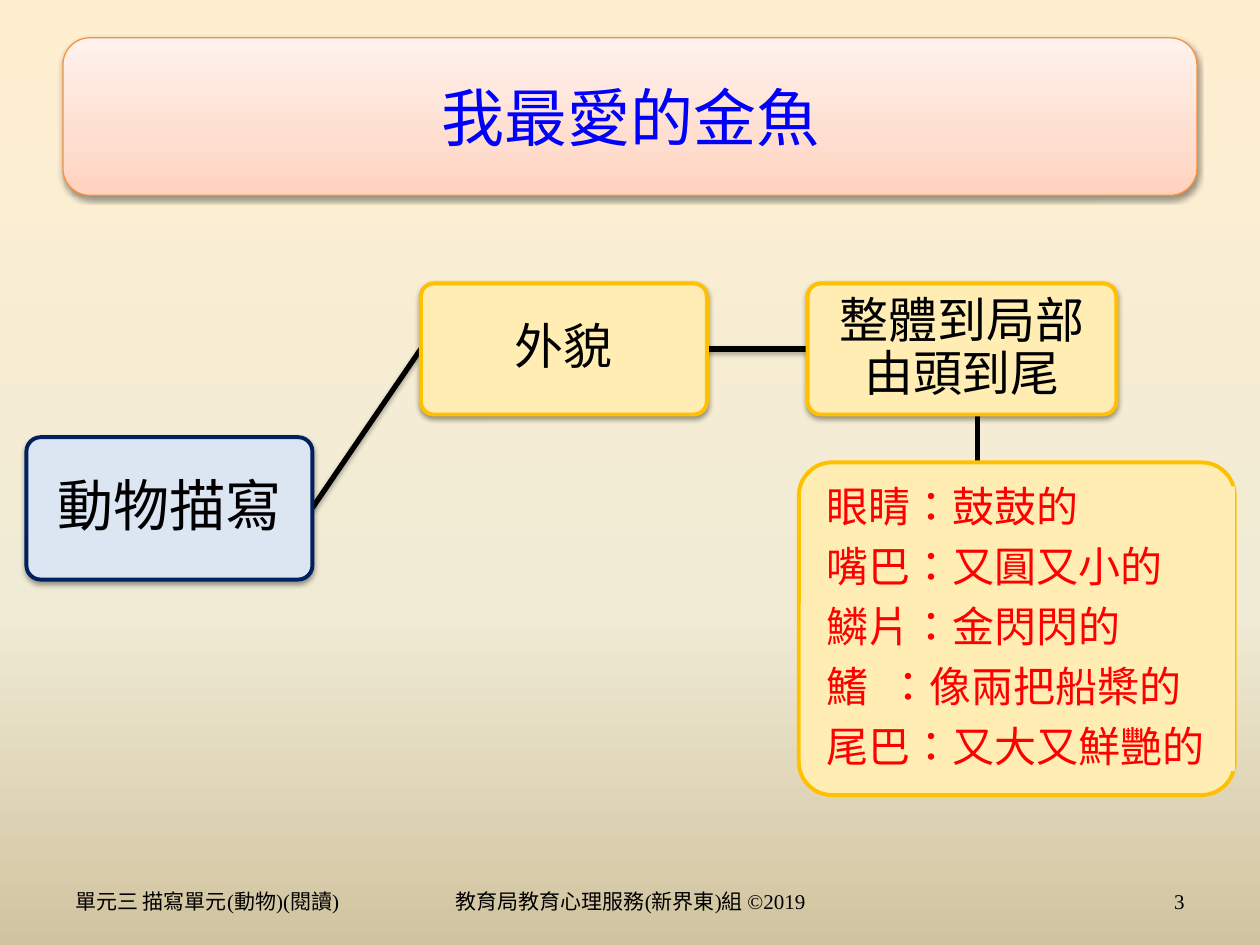
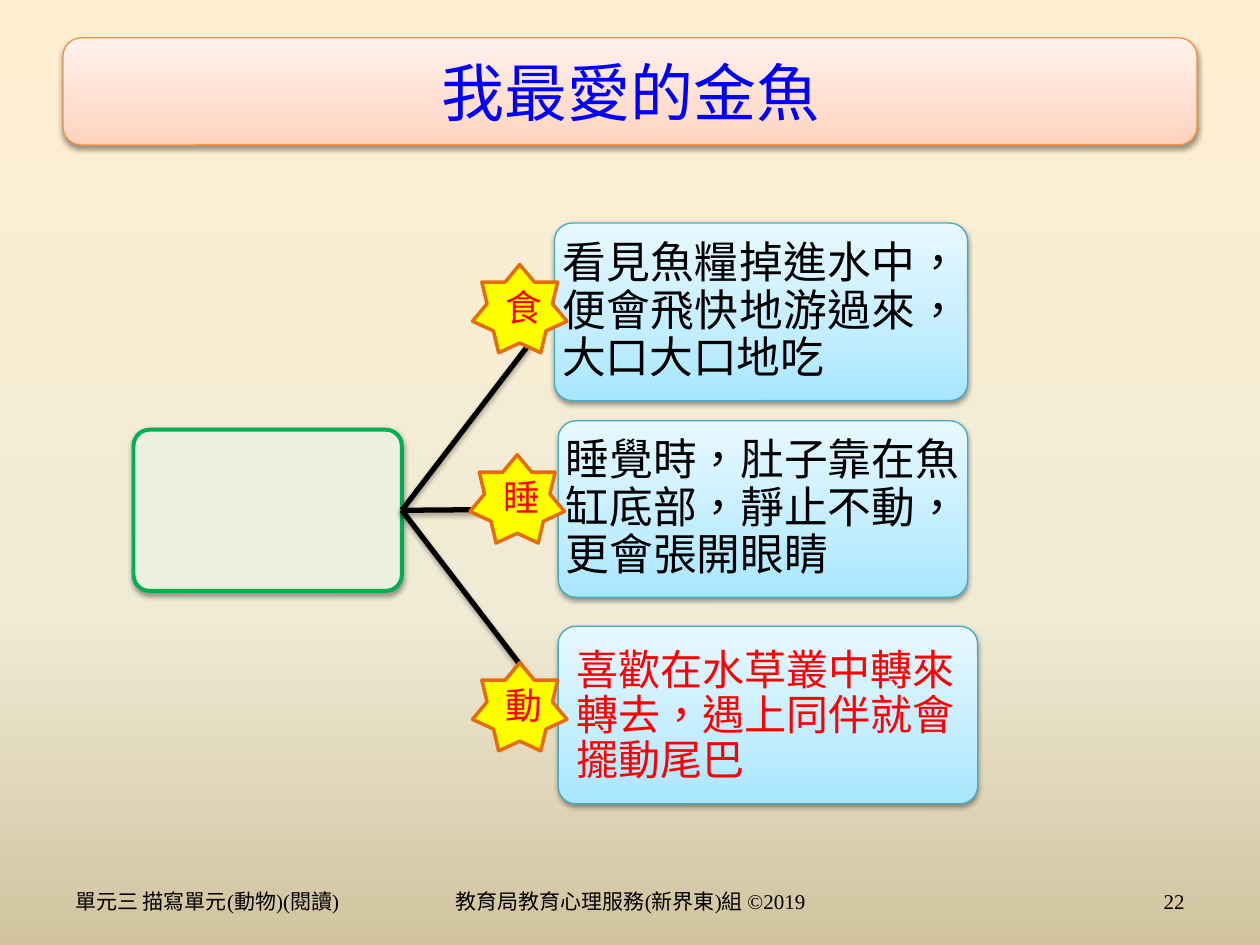
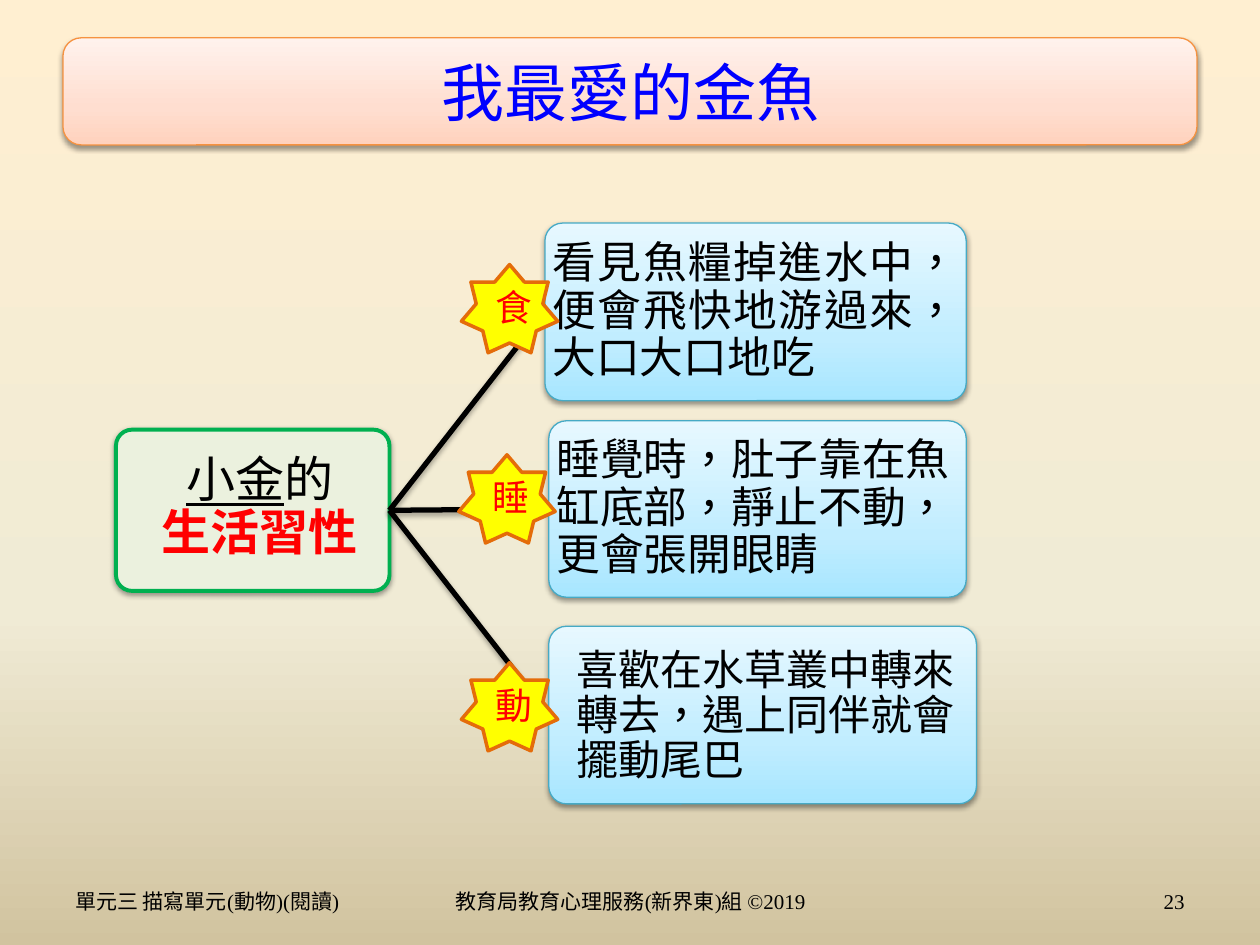
import pptx
import pptx.util
import pptx.oxml
import pptx.oxml.ns
import pptx.dml.color
import pptx.enum.shapes
import pptx.enum.text
from lxml import etree

Inches, Pt = pptx.util.Inches, pptx.util.Pt
RGBColor = pptx.dml.color.RGBColor
SHAPE = pptx.enum.shapes.MSO_SHAPE
ALIGN = pptx.enum.text.PP_ALIGN
ANCHOR = pptx.enum.text.MSO_ANCHOR
qn = pptx.oxml.ns.qn

# Colours
BLACK = RGBColor(0x00, 0x00, 0x00)
RED = RGBColor(0xFF, 0x00, 0x00)
BLUE = RGBColor(0x00, 0x00, 0xFF)
NAVY = RGBColor(0x00, 0x20, 0x60)
PALE_BLUE = RGBColor(0xDC, 0xE6, 0xF2)
CREAM = RGBColor(0xFF, 0xED, 0xB3)
AMBER = RGBColor(0xFF, 0xC0, 0x00)
PALE_GREEN = RGBColor(0xEB, 0xF1, 0xDE)
GREEN = RGBColor(0x00, 0xB0, 0x50)
YELLOW = RGBColor(0xFF, 0xFF, 0x00)
ORANGE = RGBColor(0xE4, 0x6C, 0x0A)
TITLE_EDGE = RGBColor(0xF6, 0x92, 0x40)
HABIT_EDGE = RGBColor(0x46, 0xAA, 0xC5)

# Gradients: stops (percent, colour) and clockwise angle
SAND = ([(0, RGBColor(0xFF, 0xEF, 0xD1)), (65, RGBColor(0xF0, 0xEB, 0xD5)),
         (100, RGBColor(0xD1, 0xC3, 0x9F))], 90)
PEACH = ([(0, RGBColor(0xFF, 0xD2, 0xBD)), (35, RGBColor(0xFF, 0xDE, 0xD0)),
          (100, RGBColor(0xFF, 0xF2, 0xED))], 270)
SKY = ([(0, RGBColor(0xA7, 0xE6, 0xFF)), (35, RGBColor(0xC1, 0xED, 0xFF)),
        (100, RGBColor(0xE7, 0xF8, 0xFF))], 270)

CJK = "Noto Sans CJK SC"
TITLE = "我最愛的金魚"
UNIT = "單元三 描寫單元(動物)(閱讀)"
OFFICE = "教育局教育心理服務(新界東)組 ©2019"


# Formatting
def set_gradient(fill, element, gradient):
    stops, angle = gradient
    fill.gradient()
    grad = next(element.iter(qn("a:gradFill")))
    grad.find(qn("a:lin")).set("ang", str(angle * 60000))
    gs_list = grad.find(qn("a:gsLst"))
    for gs in list(gs_list):
        gs_list.remove(gs)
    for pos, color in stops:
        gs = etree.SubElement(gs_list, qn("a:gs"), pos=str(pos * 1000))
        etree.SubElement(gs, qn("a:srgbClr"), val=str(color))


def set_effects(shape, shadow, alpha=38):
    """Call after fill and line, so that the effects come last."""
    effects = etree.SubElement(shape._element.spPr, qn("a:effectLst"))
    if shadow:
        outer = etree.SubElement(effects, qn("a:outerShdw"), blurRad=str(Pt(3.1)),
                                 dist=str(Pt(1.6)), dir="5400000", rotWithShape="0")
        color = etree.SubElement(outer, qn("a:srgbClr"), val=str(BLACK))
        etree.SubElement(color, qn("a:alpha"), val=str(alpha * 1000))


def style_shape(shape, fill, edge=None, width=2.25, shadow=True):
    if isinstance(fill, RGBColor):
        shape.fill.solid()
        shape.fill.fore_color.rgb = fill
    else:
        set_gradient(shape.fill, shape._element, fill)
    if edge is None:
        shape.line.fill.background()
    else:
        shape.line.color.rgb = edge
        shape.line.width = Pt(width)
    set_effects(shape, shadow)


def write(shape, paragraphs, size, color=BLACK, align=ALIGN.LEFT, spacing=0.9,
          after=0.35, inset=None, anchor=ANCHOR.MIDDLE):
    """Each paragraph is a list of runs: (text, font name, font overrides)."""
    tf = shape.text_frame
    tf.word_wrap = True
    tf.vertical_anchor = anchor
    if inset:
        tf.margin_left = tf.margin_right = Inches(inset[0])
        tf.margin_top = tf.margin_bottom = Inches(inset[1])
    for i, runs in enumerate(paragraphs):
        p = tf.add_paragraph() if i else tf.paragraphs[0]
        p.alignment = align
        p.line_spacing = spacing
        p.space_before = Pt(0)
        p.space_after = Pt(after * size)
        for text, font, *extra in runs:
            r = p.add_run()
            r.text = text
            r.font.name = font
            r.font.size = Pt(size)
            r.font.color.rgb = color
            r._r.get_or_add_rPr().set("lang", "zh-TW")
            for name, value in (extra[0] if extra else {}).items():
                if name == "color":
                    r.font.color.rgb = value
                else:
                    setattr(r.font, name, value)


# Parts
def add_box(s, box, fill, edge=None, kind=SHAPE.ROUNDED_RECTANGLE, width=2.25,
            shadow=True, corner=0.1):
    sp = s.shapes.add_shape(kind, *map(Inches, box))
    if kind == SHAPE.ROUNDED_RECTANGLE:
        sp.adjustments[0] = corner
    style_shape(sp, fill, edge, width, shadow)
    return sp


def add_text(s, box, paragraphs, size, **options):
    sp = s.shapes.add_textbox(*map(Inches, box))
    write(sp, paragraphs, size, **options)


def add_line(s, x1, y1, x2, y2, shadow=True):
    line = s.shapes.add_connector(pptx.enum.shapes.MSO_CONNECTOR.STRAIGHT,
                                  *map(Inches, (x1, y1, x2, y2)))
    line.line.color.rgb = BLACK
    line.line.width = Pt(3)
    set_effects(line, shadow, 35)


def add_title(s, height):
    box = (0.5, 0.3, 9, height)
    band = add_box(s, box, PEACH, TITLE_EDGE, width=0.75, corner=0.17)
    sp = s.shapes.title
    sp.left, sp.top, sp.width, sp.height = map(Inches, box)
    write(sp, [[(TITLE, "Arial")]], 36, BLUE, ALIGN.CENTER, spacing=1, after=0)
    # The band lies behind the title text
    sp._element.addprevious(band._element)


def add_footer(s, number):
    for left, width, text, align in [(0.5, 2.85, UNIT, ALIGN.LEFT),
                                     (3.42, 3.17, OFFICE, ALIGN.CENTER),
                                     (7.17, 2.33, str(number), ALIGN.RIGHT)]:
        add_text(s, (left, 6.95, width, 0.4), [[(text, "Times New Roman")]], 12,
                 align=align, spacing=1, after=0)


def new_slide(prs, title_height, number):
    s = prs.slides.add_slide(prs.slide_layouts[5])
    add_title(s, title_height)
    add_footer(s, number)
    return s


# Appearance map: topic, aspect, order of description
def add_appearance_map(s, left, top):
    nodes = [
        ((0, 1.22, 2.27, 1.13), PALE_BLUE, NAVY, ["動物描寫"], 32),
        ((3.13, 0, 2.27, 1.04), CREAM, AMBER, ["外貌"], 28),
        ((6.2, 0, 2.45, 1.04), CREAM, AMBER, ["整體到局部", "由頭到尾"], 28),
    ]
    for x1, y1, x2, y2, shadow in [(2.27, 1.78, 3.13, 0.52, True),
                                   (5.4, 0.52, 6.2, 0.52, True),
                                   (7.55, 1.03, 7.55, 1.42, False)]:
        add_line(s, left + x1, top + y1, left + x2, top + y2, shadow)
    for (x, y, w, h), fill, edge, lines, size in nodes:
        sp = add_box(s, (left + x, top + y, w, h), fill, edge)
        write(sp, [[(text, CJK)] for text in lines], size, align=ALIGN.CENTER,
              after=0.35 if len(lines) == 1 else 0, inset=(0.05, 0.05))


# Details of the fish, head to tail
def add_details(s, left, top, width, height):
    add_box(s, (left, top, width, height), CREAM, AMBER, shadow=False)
    sp = add_box(s, (left + 0.17, top + 0.19, width - 0.17, height - 0.38), CREAM,
                 kind=SHAPE.RECTANGLE, shadow=False)
    details = ["眼睛：鼓鼓的", "嘴巴：又圓又小的", "鱗片：金閃閃的",
               "鰭  ：像兩把船槳的", "尾巴：又大又鮮艷的"]
    write(sp, [[(text, "Arial")] for text in details], 24, RED, inset=(0.05, 0.03))


# Habits map: a root box and three starred habits
def add_habits_map(s, left, width, answer_color, root_text=None):
    k = width / 6.7

    def place(x, y, w, h):
        return left + k * x, y, k * w, h

    add_box(s, place(0, 3.41, 2.13, 1.28), PALE_GREEN, GREEN)
    habits = [
        (place(3.34, 1.77, 3.28, 1.41), (3.34, 2.47), "食", "Calibri", (2.69, 2.1),
         [("看見魚糧掉進水中，便會飛快地游過來，大口大口地吃", CJK)], ALIGN.JUSTIFY),
        (place(3.37, 3.34, 3.25, 1.4), (3.37, 4.04), "睡", CJK, (2.67, 3.61),
         [("睡覺時，肚子靠", CJK), ("在魚缸底部，靜止不動，更會張開", "Arial"),
          ("眼睛", CJK)], ALIGN.LEFT),
        (place(3.37, 4.97, 3.33, 1.41), (3.37, 5.67), "動", CJK, (2.69, 5.26),
         None, ALIGN.LEFT),
    ]
    for box, (x, y), star, font, (star_x, star_y), runs, align in habits:
        add_line(s, left + k * 2.13, 4.05, left + k * x, y)
        sp = add_box(s, box, SKY, HABIT_EDGE, width=0.75)
        if runs:
            # The rounded corners add to the inset
            write(sp, [runs], 25, align=align, inset=(0.02, 0.02))
        sp = add_box(s, place(star_x, star_y, 0.75, 0.7), YELLOW, ORANGE,
                     SHAPE.STAR_7_POINT, 2, shadow=False)
        write(sp, [[(star, font)]], 21, RED, ALIGN.CENTER, spacing=1, after=0)

    # Answers
    add_text(s, (4.48, 5.1, 3.23, 1.19),
             [[("喜歡在水草叢中轉來轉去，遇上同伴就會擺動尾巴", "Calibri")]], 24,
             color=answer_color, anchor=ANCHOR.TOP)
    if root_text:
        add_text(s, (left, 3.56, 2.28, 0.95), root_text, 28, align=ALIGN.CENTER,
                 after=0, anchor=ANCHOR.TOP)


def main():
    prs = pptx.Presentation()
    prs.slide_width, prs.slide_height = Inches(10), Inches(7.5)
    background = prs.slide_master.background
    set_gradient(background.fill, prs.slide_master._element, SAND)

    s = new_slide(prs, 1.25, 3)
    add_appearance_map(s, 0.21, 2.25)
    add_details(s, 6.34, 3.67, 3.46, 2.64)

    s = new_slide(prs, 0.85, 22)
    add_habits_map(s, 1.06, 6.7, RED)

    s = new_slide(prs, 0.85, 23)
    add_habits_map(s, 0.92, 6.83, BLACK, [
        [("小金", "Montserrat", {"underline": True}), ("的", "Montserrat")],
        [("生活習性", "Montserrat", {"bold": True, "color": RED})],
    ])

    prs.save("out.pptx")


if __name__ == "__main__":
    main()
